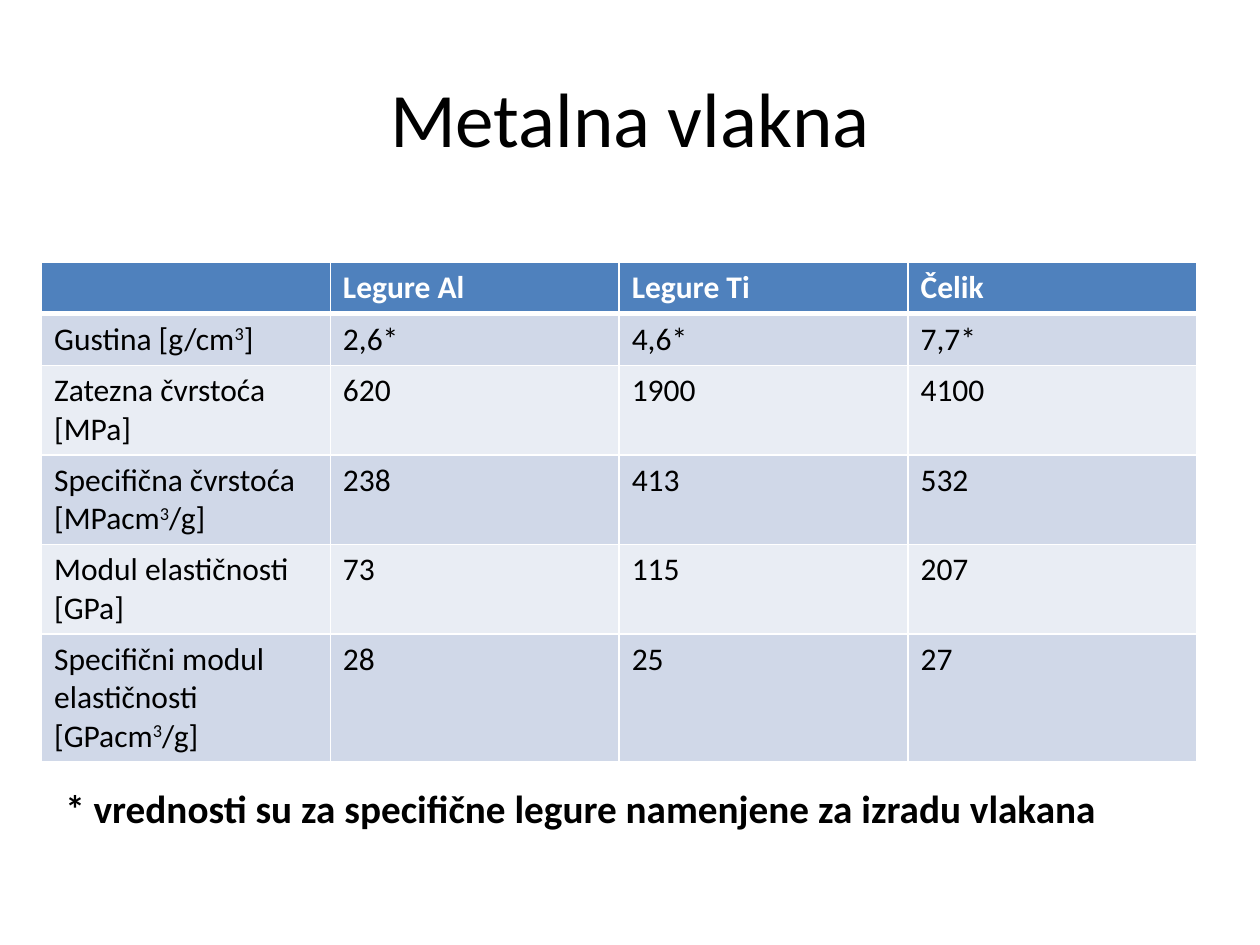
from dataclasses import dataclass
from typing import NamedTuple

from lxml.etree import SubElement
from pptx import Presentation
from pptx.dml.color import RGBColor
from pptx.enum.text import MSO_ANCHOR, PP_ALIGN
from pptx.oxml.ns import qn
from pptx.util import Inches, Pt


@dataclass(frozen=True)
class Theme:
    font: str = "Calibri"
    text: str = "000000"
    header_text: str = "FFFFFF"
    header_fill: str = "4F81BD"
    bands: tuple[str, str] = ("D0D8E8", "E9EDF4")
    border: str = "FFFFFF"
    title_size: float = 44
    table_size: float = 18
    note_size: float = 22.4


class Box(NamedTuple):
    left: float
    top: float
    width: float
    height: float

    def lengths(self) -> tuple:
        return tuple(Inches(value) for value in self)


class Property(NamedTuple):
    label: str
    aluminium: str
    titanium: str
    steel: str


THEME = Theme()
TITLE_BOX = Box(0.5, 0.3, 9, 1.25)
TABLE_BOX = Box(0.33, 2.08, 9.17, 6 * 0.41)
NOTE_BOX = Box(0.42, 6.25, 9, 0.67)

HEADER = Property("", "Legure Al", "Legure Ti", "Čelik")
PROPERTIES = [
    Property("Gustina [g/cm³]", "2,6*", "4,6*", "7,7*"),
    Property("Zatezna čvrstoća [MPa]", "620", "1900", "4100"),
    Property("Specifična čvrstoća [MPacm³/g]", "238", "413", "532"),
    Property("Modul elastičnosti [GPa]", "73", "115", "207"),
    Property("Specifični modul elastičnosti [GPacm³/g]", "28", "25", "27"),
]


def add_span(para, text: str, size: float, color: str, bold: bool = False):
    span = para.add_run()
    span.text = text
    formats = {"name": THEME.font, "size": Pt(size), "bold": bold}
    for name, value in formats.items():
        setattr(span.font, name, value)
    span.font.color.rgb = RGBColor.from_string(color)
    return span


def add_unit_text(para, text: str, color: str, bold: bool) -> None:
    """Write text, turning each ³ into a raised 3."""
    for index, part in enumerate(text.split("³")):
        if index:
            raised = add_span(para, "3", THEME.table_size, color, bold)
            raised.font._element.set("baseline", "30000")
        if part:
            add_span(para, part, THEME.table_size, color, bold)


def set_borders(cell, widths: dict[str, float]) -> None:
    properties = cell._tc.get_or_add_tcPr()
    for side, width in widths.items():
        line = SubElement(properties, qn(f"a:ln{side}"), w=str(Pt(width)))
        fill = SubElement(line, qn("a:solidFill"))
        SubElement(fill, qn("a:srgbClr"), val=THEME.border)


def add_title(page, text: str) -> None:
    title = page.shapes.title
    title.left, title.top, title.width, title.height = TITLE_BOX.lengths()
    title.text_frame.vertical_anchor = MSO_ANCHOR.MIDDLE
    para = title.text_frame.paragraphs[0]
    para.alignment = PP_ALIGN.CENTER
    add_span(para, text, THEME.title_size, THEME.text)


def add_property_table(page, header: Property, properties: list[Property]) -> None:
    rows = [header, *properties]
    table = page.shapes.add_table(len(rows), len(header), *TABLE_BOX.lengths()).table
    for row_index, row in enumerate(rows):
        is_header = row_index == 0
        fill = THEME.header_fill if is_header else THEME.bands[(row_index - 1) % 2]
        color = THEME.header_text if is_header else THEME.text
        top = 3 if row_index == 1 else 1
        bottom = 3 if is_header else 1
        for column_index, text in enumerate(row):
            cell = table.cell(row_index, column_index)
            set_borders(cell, {"L": 1, "R": 1, "T": top, "B": bottom})
            cell.fill.solid()
            cell.fill.fore_color.rgb = RGBColor.from_string(fill)
            para = cell.text_frame.paragraphs[0]
            para.font.size = Pt(THEME.table_size)
            add_unit_text(para, text, color, is_header)


def add_note(page, text: str) -> None:
    frame = page.shapes.add_textbox(*NOTE_BOX.lengths()).text_frame
    frame.word_wrap = True
    para = frame.paragraphs[0]
    para.line_spacing = 0.8
    para.space_before = Pt(0.2 * THEME.note_size)
    indents = {"marL": Inches(0.38), "indent": Inches(-0.38)}
    for name, value in indents.items():
        para._p.get_or_add_pPr().set(name, str(value))
    add_span(para, text, THEME.note_size, THEME.text, bold=True)


def main() -> None:
    deck = Presentation()
    deck.slide_width, deck.slide_height = Inches(10), Inches(7.5)
    title_only = deck.slide_layouts[5]
    page = deck.slides.add_slide(title_only)
    add_title(page, "Metalna vlakna")
    add_property_table(page, HEADER, PROPERTIES)
    add_note(page, "* vrednosti su za specifične legure namenjene za izradu vlakana")
    deck.save("out.pptx")


if __name__ == "__main__":
    main()
